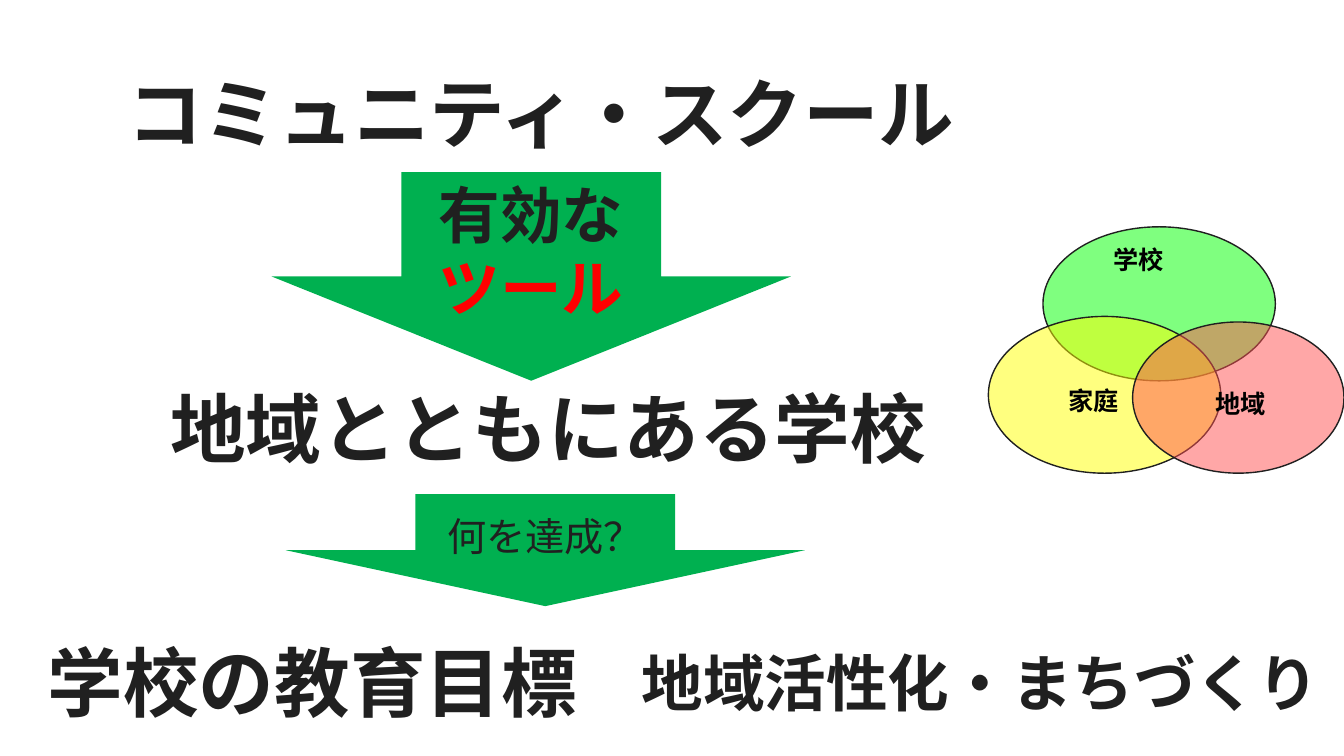
from lxml.etree import SubElement
from pptx import Presentation
from pptx.dml.color import RGBColor
from pptx.enum.shapes import MSO_SHAPE as Shape
from pptx.enum.text import MSO_ANCHOR as Anchor, PP_ALIGN as Align
from pptx.oxml.ns import qn
from pptx.util import Pt

INK = RGBColor(0x20, 0x20, 0x20)
BLACK = RGBColor(0x00, 0x00, 0x00)
WHITE = RGBColor(0xFF, 0xFF, 0xFF)
RED = RGBColor(0xFF, 0x00, 0x00)
ARROW_GREEN = RGBColor(0x00, 0xB0, 0x50)
SCHOOL_GREEN = RGBColor(0x00, 0xFF, 0x00)
HOME_YELLOW = RGBColor(0xFF, 0xFF, 0x00)
REGION_PINK = RGBColor(0xFF, 0x50, 0x50)


def write(paragraph, text, size=54, color=INK, bold=True, font="Roboto"):
    run = paragraph.add_run()
    run.text = text
    run.font.size = Pt(size)
    run.font.bold = bold
    run.font.color.rgb = color
    run.font.name = font
    # Japanese glyphs take their font from the East Asian slot
    SubElement(run.font._element, qn("a:ea")).set("typeface", font)


def add_filled(slide, kind, box, color):
    figure = slide.shapes.add_shape(kind, *map(Pt, box))
    figure.shadow.inherit = False
    figure.fill.solid()
    figure.fill.fore_color.rgb = color
    figure.line.fill.background()
    return figure


def centred_paragraph(figure, wrap):
    frame = figure.text_frame
    frame.word_wrap = wrap
    frame.vertical_anchor = Anchor.MIDDLE
    frame.paragraphs[0].alignment = Align.CENTER
    return frame.paragraphs[0]


def add_heading(slide, text, box, size=54):
    plate = add_filled(slide, Shape.ROUNDED_RECTANGLE, box, WHITE)
    write(centred_paragraph(plate, wrap=False), text, size=size)


def add_down_arrow(slide, box):
    arrow = add_filled(slide, Shape.DOWN_ARROW, box, ARROW_GREEN)
    return centred_paragraph(arrow, wrap=True)


def add_circle(slide, text, box, color, label_at):
    circle = add_filled(slide, Shape.OVAL, box, color)
    tint = circle.fill._xPr.find(qn("a:solidFill"))[0]
    SubElement(tint, qn("a:alpha")).set("val", "50000")
    circle.line.color.rgb = INK
    circle.line.width = Pt(1)

    label = slide.shapes.add_textbox(*map(Pt, (*label_at, 70, 29)))
    label.text_frame.word_wrap = True
    write(label.text_frame.paragraphs[0], text, size=18, color=BLACK,
          font="Noto Sans CJK SC")


def main():
    deck = Presentation()
    deck.slide_width, deck.slide_height = Pt(960), Pt(540)
    slide = deck.slides.add_slide(deck.slide_layouts[6])

    # Means and the school it leads to
    add_heading(slide, "地域とともにある学校", (77, 272, 629, 66))
    add_heading(slide, "コミュニティ・スクール", (72, 40, 629, 80))
    tool = add_down_arrow(slide, (194, 123, 371, 149))
    write(tool, "有効な", size=44)
    write(tool, "ツール", size=44, color=RED)

    # Three overlapping partners
    add_circle(slide, "学校", (745, 162, 166, 110), SCHOOL_GREEN, (788, 171))
    add_circle(slide, "家庭", (706, 226, 166, 112), HOME_YELLOW, (756, 272))
    add_circle(slide, "地域", (809, 230, 151, 108), REGION_PINK, (861, 274))

    # Goals
    question = add_down_arrow(slide, (204, 353, 371, 80))
    write(question, "何を達成？", size=28, bold=False)
    add_heading(slide, "学校の教育目標", (11.5, 454, 423, 66))
    add_heading(slide, "地域活性化・まちづくり", (446, 454, 509, 66), size=44)

    deck.save("out.pptx")


if __name__ == "__main__":
    main()
